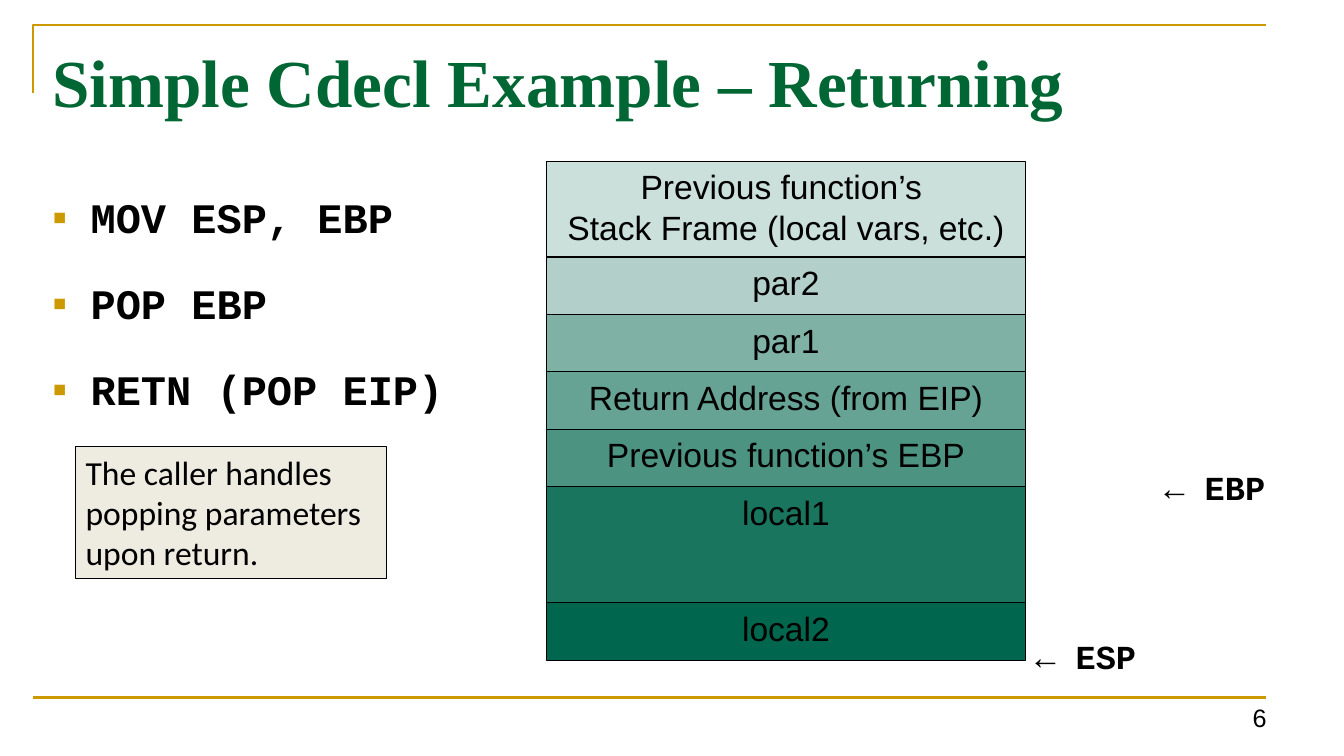
from lxml import etree
from pptx import Presentation
from pptx.dml.color import RGBColor
from pptx.enum.shapes import MSO_CONNECTOR, MSO_SHAPE
from pptx.enum.text import MSO_ANCHOR, PP_ALIGN
from pptx.oxml.ns import qn
from pptx.util import Inches, Pt

LEFT, MID, RIGHT = PP_ALIGN.LEFT, PP_ALIGN.CENTER, PP_ALIGN.RIGHT
TOP, CENTRE, BASE = MSO_ANCHOR.TOP, MSO_ANCHOR.MIDDLE, MSO_ANCHOR.BOTTOM
RECT = MSO_SHAPE.RECTANGLE
LINE = MSO_CONNECTOR.STRAIGHT

STACK = [
    ("Previous function’s \vStack Frame (local vars, etc.)", 0.95, 20),
    ("par2", 0.57, 30),
    ("par1", 0.57, 50),
    ("Return Address (from EIP)", 0.57, 60),
    ("Previous function’s EBP", 0.57, 70),
    ("local1", 1.15, 90),
    ("local2", 0.57, 100),
]
STEPS = ["MOV ESP, EBP", "POP EBP", "RETN (POP EIP)"]


def paint(text):
    """Turn a hex string into a colour."""
    return RGBColor.from_string(text)


class Sheet:
    """Hold the style and the current slide."""

    gold, green, teal = "CC9900", "006633", "00664D"
    ink, cream = "000000", "EEECE1"
    sans, code, serif, note = "Arial", "Courier New", "Times New Roman", "Calibri"

    def __init__(self, deck):
        """Add a title-only slide."""
        self.slide = deck.slides.add_slide(deck.slide_layouts[5])
        self.shapes = self.slide.shapes

    def fill_text(self, shape, text, size, font, bold=False, color=ink,
                  align=LEFT, anchor=TOP, wrap=True):
        """Set and format the text of a shape."""
        frame = shape.text_frame
        frame.text = text
        frame.word_wrap = wrap
        frame.vertical_anchor = anchor
        for para in frame.paragraphs:
            para.alignment = align
            for run in para.runs:
                run.font.size = Pt(size)
                run.font.name = font
                run.font.bold = bold
                run.font.color.rgb = paint(color)
        return frame

    def title(self, text, box):
        """Place and format the title."""
        shape = self.shapes.title
        shape.left, shape.top, shape.width, shape.height = map(Inches, box)
        frame = self.fill_text(shape, text, 48, self.serif, True, self.green,
                               anchor=CENTRE)
        frame.paragraphs[0].line_spacing = 0.9

    def label(self, text, box, size, font, **style):
        """Add a plain text box."""
        shape = self.shapes.add_textbox(*map(Inches, box))
        return self.fill_text(shape, text, size, font, **style)

    def block(self, text, box, fill, font, align=LEFT, alpha=100):
        """Add an outlined rectangle with text."""
        shape = self.shapes.add_shape(RECT, *map(Inches, box))
        shape.shadow.inherit = False
        shape.fill.solid()
        shape.fill.fore_color.rgb = paint(fill)
        shape.line.color.rgb = paint(self.ink)
        shape.line.width = Pt(0.75)
        if alpha < 100:
            tint = shape._element.spPr.find(qn("a:solidFill"))[0]
            etree.SubElement(tint, qn("a:alpha"), val=str(alpha * 1000))
        self.fill_text(shape, text, 24, font, align=align)

    def bullets(self, items, box):
        """Add a bulleted list of code."""
        frame = self.label("\n".join(items), box, 30, self.code, bold=True)
        for para in frame.paragraphs:
            para.line_spacing = 1.5
            para.space_before = Pt(7.5)
            props = para._p.get_or_add_pPr()
            props.set("marL", str(Inches(0.38)))
            props.set("indent", str(-Inches(0.38)))
            tint = etree.SubElement(props, qn("a:buClr"))
            etree.SubElement(tint, qn("a:srgbClr"), val=self.gold)
            etree.SubElement(props, qn("a:buFont"), typeface=self.sans)
            etree.SubElement(props, qn("a:buChar"), char="▪")

    def rule(self, start, end):
        """Add a gold line."""
        line = self.shapes.add_connector(LINE, *map(Inches, start + end))
        line.line.color.rgb = paint(self.gold)
        line.line.width = Pt(1.5)
        etree.SubElement(line._element.spPr, qn("a:effectLst"))

    def corner(self, first, *rest):
        """Add an open gold outline."""
        draft = self.shapes.build_freeform(*map(Inches, first), scale=1.0)
        draft.add_line_segments([tuple(map(Inches, p)) for p in rest], close=False)
        shape = draft.convert_to_shape()
        shape.shadow.inherit = False
        shape.fill.background()
        shape.line.color.rgb = paint(self.gold)
        shape.line.width = Pt(1.5)


def main():
    """Build and save the slide."""
    deck = Presentation()
    deck.slide_width, deck.slide_height = Inches(13.33), Inches(7.5)
    sheet = Sheet(deck)
    sheet.corner((0.33, 0.92), (0.33, 0.25), (12.56, 0.25))
    sheet.rule((0.33, 6.92), (12.56, 6.92))
    sheet.label("6", (11.22, 6.83, 1.44, 0.49), 18, sheet.sans,
                align=RIGHT, anchor=BASE)
    sheet.title("Simple Cdecl Example – Returning", (0.42, 0.3, 12.24, 1.11))
    sheet.bullets(STEPS, (0.42, 1.6, 4.42, 5.1))
    top = 1.6
    for text, height, alpha in STACK:
        sheet.block(text, (5.42, top, 4.75, height), sheet.teal, sheet.sans,
                    MID, alpha)
        top += height
    for text, left, top in (("← ESP", 10.17, 6.26), ("← EBP", 11.45, 4.58)):
        sheet.label(text, (left, top, 1.34, 0.5), 24, sheet.code,
                    bold=True, wrap=False)
    sheet.block("The caller handles popping parameters upon return.",
                (0.75, 4.43, 3.08, 1.31), sheet.cream, sheet.note)
    deck.save("out.pptx")


if __name__ == "__main__":
    main()
